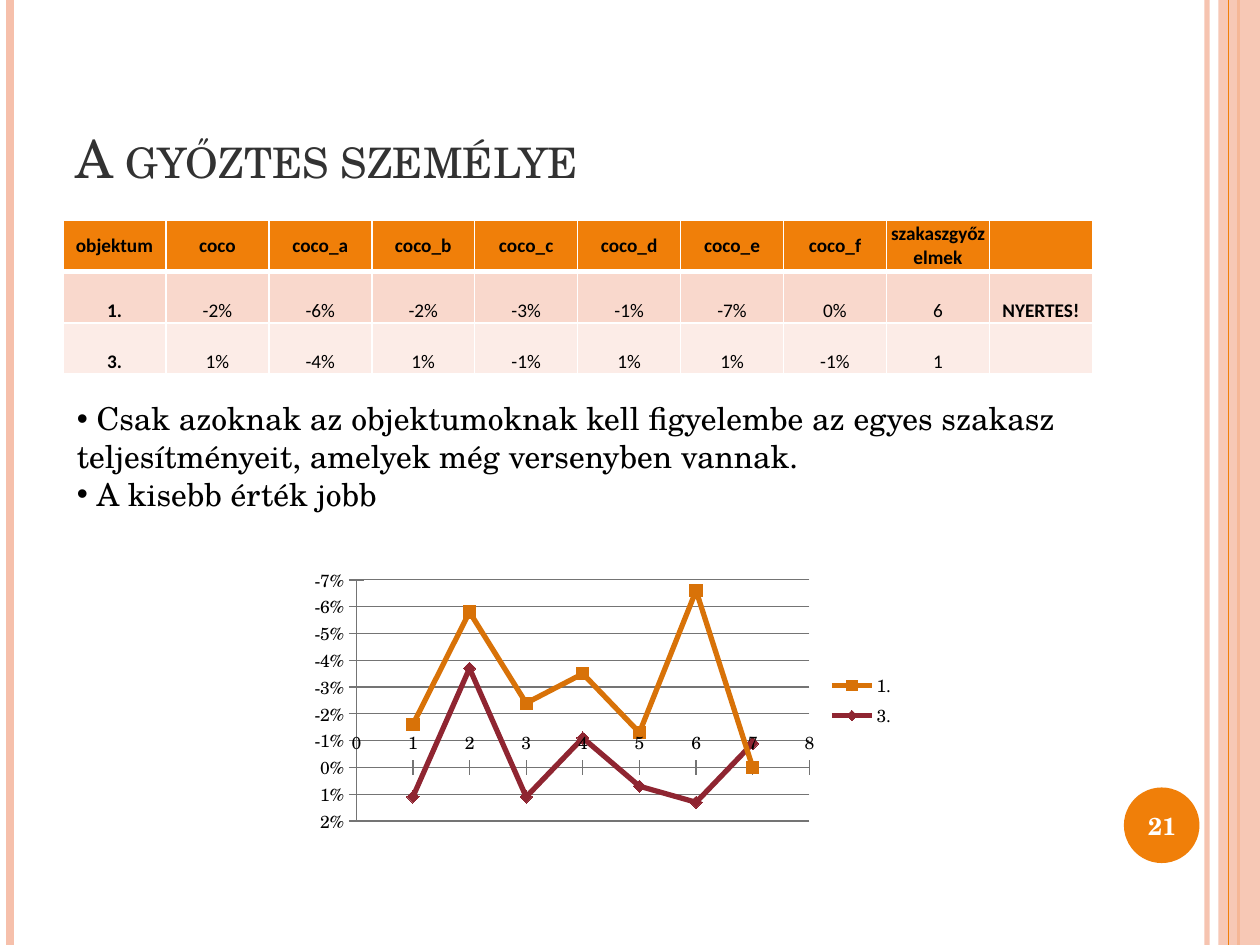
from dataclasses import dataclass
from typing import Optional

from lxml import etree
from pptx import Presentation
from pptx.chart.data import XyChartData
from pptx.dml.color import RGBColor
from pptx.enum.chart import XL_CHART_TYPE, XL_LEGEND_POSITION, XL_MARKER_STYLE, XL_TICK_MARK
from pptx.enum.shapes import MSO_CONNECTOR, MSO_SHAPE
from pptx.enum.text import MSO_ANCHOR, MSO_AUTO_SIZE, PP_ALIGN
from pptx.oxml.ns import qn
from pptx.util import Inches, Pt

LEFT, CENTER = PP_ALIGN.LEFT, PP_ALIGN.CENTER
MIDDLE, BOTTOM = MSO_ANCHOR.MIDDLE, MSO_ANCHOR.BOTTOM
SQUARE, DIAMOND = XL_MARKER_STYLE.SQUARE, XL_MARKER_STYLE.DIAMOND

# The slide is a grid of 100 columns and 75 rows
COLUMNS, ROWS = 100, 75
CELL = Inches(0.1)


@dataclass(frozen=True)
class Theme:
    serif: str = "TeX Gyre Schola"
    sans: str = "Calibri"
    orange: str = "F07F09"
    red: str = "9F2936"
    peach: str = "F6C0AB"
    band_dark: str = "F9D8CC"
    band_light: str = "FCECE7"
    title: str = "323232"
    ink: str = "000000"
    white: str = "FFFFFF"
    grid: str = "747474"
    title_size: float = 30
    body_size: float = 18
    number_size: float = 14
    table_size: float = 11
    chart_size: float = 10


@dataclass(frozen=True)
class Area:
    column: float
    row: float
    columns: float
    rows: float

    def lengths(self) -> tuple:
        return tuple(int(v * CELL) for v in (self.column, self.row, self.columns, self.rows))


@dataclass(frozen=True)
class Stripe:
    column: float
    color: str
    weight: float
    opacity: Optional[int] = None


@dataclass(frozen=True)
class Curve:
    name: str
    values: tuple
    color: str
    marker: int


THEME = Theme()
BACK_STRIPES = (
    Stripe(95.8, THEME.peach, 3, 93),
    Stripe(0.8, THEME.peach, 4.5),
    Stripe(98.3, THEME.orange, 1.5),
)
FRONT_STRIPE = Stripe(97.5, THEME.orange, 0.75)
TABLE_ROWS = (
    ("objektum", "coco", "coco_a", "coco_b", "coco_c", "coco_d", "coco_e", "coco_f",
     "szakaszgyőzelmek", ""),
    ("1.", "-2%", "-6%", "-2%", "-3%", "-1%", "-7%", "0%", "6", "NYERTES!"),
    ("3.", "1%", "-4%", "1%", "-1%", "1%", "1%", "-1%", "1", ""),
)
POINTS = (
    " Csak azoknak az objektumoknak kell figyelembe az egyes szakasz teljesítményeit, "
    "amelyek még versenyben vannak.",
    " A kisebb érték jobb",
)
CURVES = (
    Curve("1.", (-0.016, -0.058, -0.024, -0.035, -0.013, -0.066, 0), THEME.orange, SQUARE),
    Curve("3.", (0.011, -0.037, 0.011, -0.011, 0.007, 0.013, -0.009), THEME.red, DIAMOND),
)


def rgb(color: str) -> RGBColor:
    return RGBColor.from_string(color)


def set_opacity(shape, percent: int) -> None:
    color = next(shape.element.spPr.iter(qn("a:srgbClr")))
    etree.SubElement(color, qn("a:alpha")).set("val", str(percent * 1000))


def place(shape, area: Area) -> None:
    shape.left, shape.top, shape.width, shape.height = area.lengths()


def bring_to_front(shape) -> None:
    shape.element.getparent().append(shape.element)


def add_span(para, text: str, size: float, color: str, font: str = THEME.serif,
             bold: bool = False):
    span = para.add_run()
    span.text = text
    span.font.size, span.font.name, span.font.bold = Pt(size), font, bold
    span.font.color.rgb = rgb(color)
    return span


def draw_stripe(slide, stripe: Stripe) -> None:
    x = int(stripe.column * CELL)
    line = slide.shapes.add_connector(MSO_CONNECTOR.STRAIGHT, x, 0, x, ROWS * CELL)
    line.line.color.rgb = rgb(stripe.color)
    line.line.width = Pt(stripe.weight)
    etree.SubElement(line.element.spPr, qn("a:effectLst"))
    if stripe.opacity:
        set_opacity(line, stripe.opacity)


def draw_shape(slide, preset: int, area: Area, color: str, opacity: Optional[int] = None) -> None:
    shape = slide.shapes.add_shape(preset, *area.lengths())
    shape.shadow.inherit = False
    shape.fill.solid()
    shape.fill.fore_color.rgb = rgb(color)
    shape.line.fill.background()
    if opacity:
        set_opacity(shape, opacity)


def set_border(cell, side: str, weight: float) -> None:
    line = etree.SubElement(cell._tc.get_or_add_tcPr(), qn(f"a:ln{side}"), w=str(Pt(weight)))
    fill = etree.SubElement(line, qn("a:solidFill"))
    etree.SubElement(fill, qn("a:srgbClr"), val=THEME.white)


def draw_table(slide, area: Area) -> None:
    table = slide.shapes.add_table(len(TABLE_ROWS), len(TABLE_ROWS[0]), *area.lengths()).table
    table.first_row = table.horz_banding = False
    fills = (THEME.orange, THEME.band_dark, THEME.band_light)
    for r, (texts, fill) in enumerate(zip(TABLE_ROWS, fills)):
        for c, text in enumerate(texts):
            cell = table.cell(r, c)
            cell.margin_left = cell.margin_right = cell.margin_top = cell.margin_bottom = 0
            cell.vertical_anchor = BOTTOM if r else MIDDLE
            # The rule under the header is thicker
            for side, weight in zip("LRTB", (1, 1, 3 if r == 1 else 1, 1 if r else 3)):
                set_border(cell, side, weight)
            cell.fill.solid()
            cell.fill.fore_color.rgb = rgb(fill)
            if text:
                para = cell.text_frame.paragraphs[0]
                para.alignment = CENTER
                bold = r == 0 or c in (0, len(texts) - 1)
                add_span(para, text, THEME.table_size, THEME.ink, THEME.sans, bold)


def fill_title(title, area: Area) -> None:
    place(title, area)
    bring_to_front(title)
    box = title.text_frame
    box.vertical_anchor, box.auto_size = BOTTOM, MSO_AUTO_SIZE.NONE
    box.paragraphs[0].alignment = LEFT
    span = add_span(box.paragraphs[0], "A győztes személye", THEME.title_size, THEME.title)
    span.font._element.set("cap", "small")


def fill_body(body, area: Area) -> None:
    place(body, area)
    bring_to_front(body)
    box = body.text_frame
    box.auto_size = MSO_AUTO_SIZE.SHAPE_TO_FIT_TEXT
    for index, text in enumerate(POINTS):
        para = box.add_paragraph() if index else box.paragraphs[0]
        para.space_before = Pt(0)
        layout = para._p.get_or_add_pPr()
        layout.set("marL", "0")
        layout.set("indent", "0")
        etree.SubElement(layout, qn("a:buFont"), typeface="Arial")
        etree.SubElement(layout, qn("a:buChar"), char="•")
        add_span(para, text, THEME.body_size, THEME.ink)


def style_axis(axis, low: float, high: float, step: float, number_format: str) -> None:
    axis.minimum_scale, axis.maximum_scale, axis.major_unit = low, high, step
    axis.major_tick_mark, axis.minor_tick_mark = XL_TICK_MARK.CROSS, XL_TICK_MARK.NONE
    axis.tick_labels.number_format = number_format
    axis.tick_labels.number_format_is_linked = False
    axis.format.line.color.rgb = rgb(THEME.grid)


def draw_chart(slide, area: Area) -> None:
    data = XyChartData()
    for curve in CURVES:
        series = data.add_series(curve.name)
        for x, y in enumerate(curve.values, start=1):
            series.add_data_point(x, y)
    chart = slide.shapes.add_chart(XL_CHART_TYPE.XY_SCATTER_SMOOTH, *area.lengths(), data).chart
    chart.has_title = False
    chart.font.size, chart.font.name = Pt(THEME.chart_size), THEME.serif
    chart.font.color.rgb = rgb(THEME.ink)
    chart.has_legend = True
    chart.legend.position = XL_LEGEND_POSITION.RIGHT
    chart.legend.include_in_layout = False
    chart.plots[0].vary_by_categories = False
    # Axes: smaller values stand higher
    style_axis(chart.category_axis, 0, 8, 1, "0")
    style_axis(chart.value_axis, -0.07, 0.02, 0.01, "0%")
    chart.category_axis.has_major_gridlines = False
    chart.value_axis.reverse_order = True
    chart.value_axis.has_major_gridlines = True
    chart.value_axis.major_gridlines.format.line.color.rgb = rgb(THEME.grid)
    for series, curve in zip(chart.plots[0].series, CURVES):
        series.smooth = True
        series.format.line.width = Pt(3)
        series.marker.style, series.marker.size = curve.marker, 7
        series.marker.format.fill.solid()
        for color in (series.format.line.color, series.marker.format.fill.fore_color,
                      series.marker.format.line.color):
            color.rgb = rgb(curve.color)
            color.brightness = -0.1


def draw_number(slide, area: Area) -> None:
    box = slide.shapes.add_textbox(*area.lengths()).text_frame
    box.word_wrap, box.vertical_anchor = True, MIDDLE
    box.paragraphs[0].alignment = CENTER
    add_span(box.paragraphs[0], "21", THEME.number_size, THEME.white, bold=True)


def main() -> None:
    deck = Presentation()
    deck.slide_width, deck.slide_height = COLUMNS * CELL, ROWS * CELL
    slide = deck.slides.add_slide(deck.slide_layouts[1])
    # Frame stripes and number badge
    for stripe in BACK_STRIPES:
        draw_stripe(slide, stripe)
    draw_shape(slide, MSO_SHAPE.RECTANGLE, Area(96.7, 0, 3.3, ROWS), THEME.peach, 87)
    draw_stripe(slide, FRONT_STRIPE)
    draw_shape(slide, MSO_SHAPE.OVAL, Area(89.2, 62.5, 6, 6), THEME.orange)
    # Content
    fill_title(slide.shapes.title, Area(5, 3, 81.7, 12.5))
    draw_table(slide, Area(5, 17.5, 81.7, 12.2))
    fill_body(slide.placeholders[1], Area(5.1, 31.2, 81.1, 10.1))
    draw_chart(slide, Area(24, 44.6, 48, 22))
    draw_number(slide, Area(88.9, 62.7, 6.7, 5.7))
    deck.save("out.pptx")


if __name__ == "__main__":
    main()
